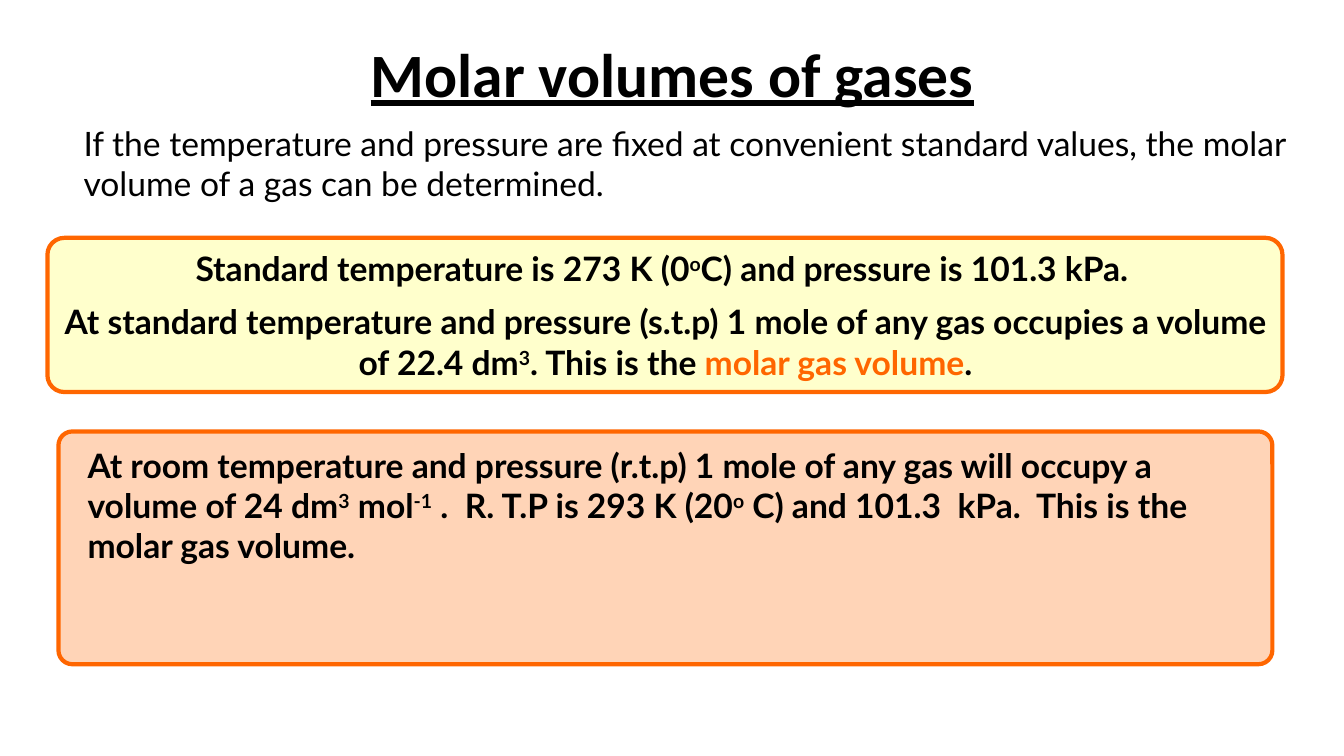
from pptx import Presentation
from pptx.dml.color import RGBColor
from pptx.enum.shapes import MSO_SHAPE
from pptx.enum.text import MSO_ANCHOR, PP_ALIGN
from pptx.util import Inches, Pt

ORANGE = "FF6600"
SUPER = {"baseline": 30}


def rgb(value):
    return RGBColor.from_string(value)


def add_run(p, text, size=24, font="Lato", color="000000", bold=False,
            underline=False, baseline=0):
    r = p.add_run()
    r.text = text
    r.font.size = Pt(size)
    r.font.name = font
    r.font.color.rgb = rgb(color)
    r.font.bold = bold
    r.font.underline = underline
    if baseline:
        r.font._element.set("baseline", str(baseline * 1000))


def place(sp, left, top, width, height):
    sp.left, sp.top = Inches(left), Inches(top)
    sp.width, sp.height = Inches(width), Inches(height)


def add_title(s, text, *box):
    sp = s.shapes.title
    place(sp, *box)
    tf = sp.text_frame
    tf.vertical_anchor = MSO_ANCHOR.MIDDLE
    p = tf.paragraphs[0]
    p.alignment = PP_ALIGN.CENTER
    p.line_spacing = 0.9
    add_run(p, text, size=44, font="Calibri", bold=True, underline=True)


def add_text(s, runs, *box, align=PP_ALIGN.LEFT, bold=True, space_before=0):
    sp = s.shapes.add_textbox(*map(Inches, box))
    tf = sp.text_frame
    tf.word_wrap = True
    p = tf.paragraphs[0]
    p.alignment = align
    p.space_before = Pt(space_before)
    for text, style in runs:
        add_run(p, text, bold=bold, **style)


def add_panel(s, fill, radius, *box):
    sp = s.shapes.add_shape(MSO_SHAPE.ROUNDED_RECTANGLE, *map(Inches, box))
    sp.adjustments[0] = radius
    sp.shadow.inherit = False
    sp.fill.solid()
    sp.fill.fore_color.rgb = rgb(fill)
    sp.line.color.rgb = rgb(ORANGE)
    sp.line.width = Pt(3)


def main():
    prs = Presentation()
    prs.slide_width, prs.slide_height = Inches(13.33), Inches(7.5)
    s = prs.slides.add_slide(prs.slide_layouts[5])

    add_title(s, "Molar volumes of gases", 0.92, 0.04, 11.5, 1.45)
    add_text(s, [("If the temperature and pressure are fixed at convenient standard "
                  "values, the molar volume of a gas can be determined.", {})],
             0.73, 1.17, 12.21, 0.91, bold=False)

    add_panel(s, "FFFFCC", 0.11, 0.47, 2.36, 12.25, 1.53)
    add_text(s, [("Standard temperature is 273 K (0", {}), ("o", SUPER),
                 ("C) and pressure is 101.3 kPa. ", {})],
             0.81, 2.41, 11.59, 0.5, align=PP_ALIGN.CENTER, space_before=2.4)
    add_text(s, [("At standard temperature and pressure (s.t.p) 1 mole of any gas "
                  "occupies a volume of 22.4 dm", {}), ("3", SUPER),
                 (". This is the ", {}), ("molar gas volume", {"color": ORANGE}),
                 (".", {})],
             0.49, 2.94, 12.22, 0.91, align=PP_ALIGN.CENTER)

    add_panel(s, "FFD4B7", 0.06, 0.58, 4.28, 12.04, 2.31)
    add_text(s, [("At room temperature and pressure (r.t.p) 1 mole of any gas will "
                  "occupy a volume of 24 dm", {}), ("3", SUPER), (" mol", {}),
                 ("-1", SUPER), (" .  R. T.P is 293 K (20", {}), ("o", SUPER),
                 (" C) and 101.3  kPa.  This is the molar gas volume.", {})],
             0.77, 4.36, 11.67, 1.31)

    prs.save("out.pptx")


if __name__ == "__main__":
    main()
